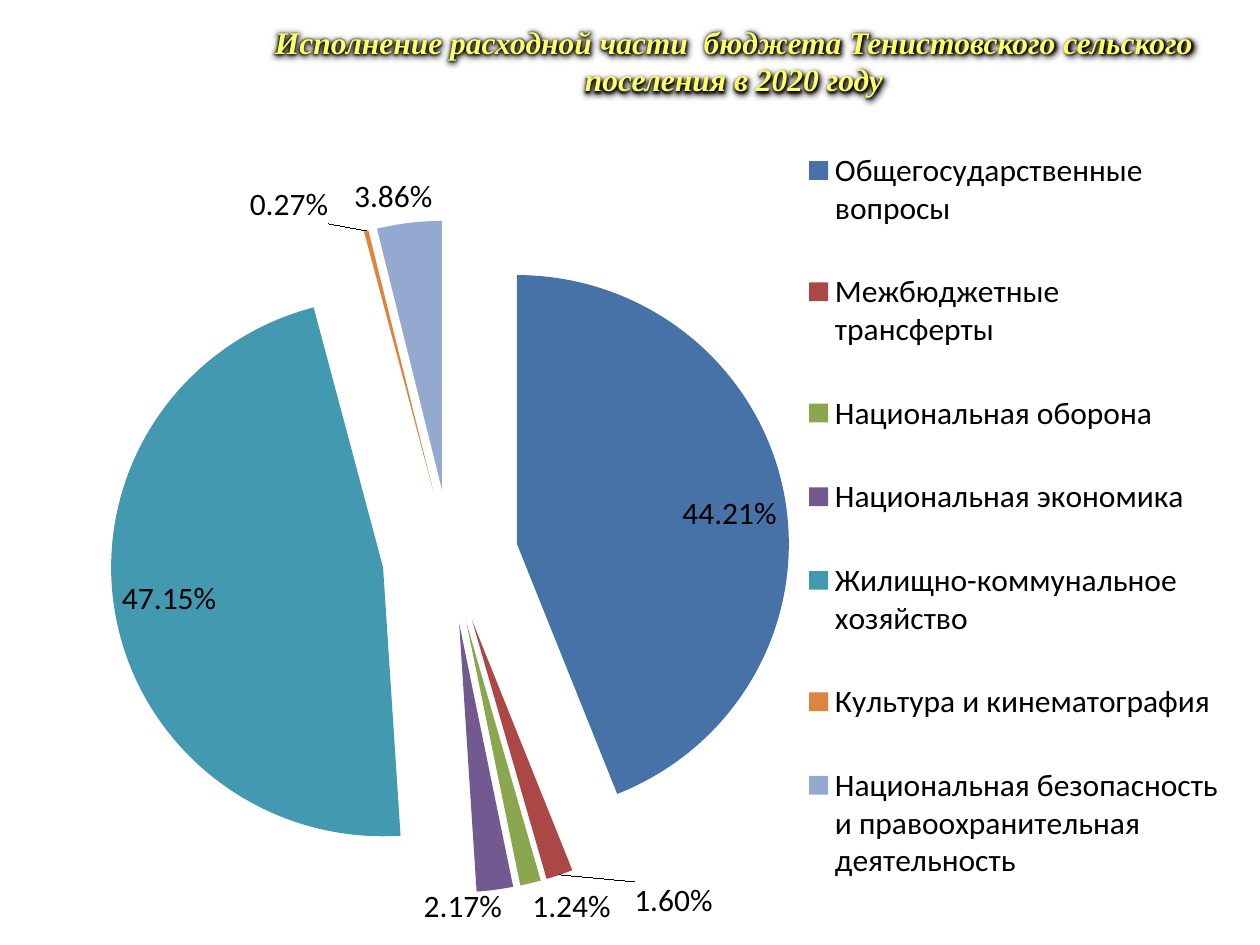
from lxml import etree
from pptx import Presentation
from pptx.chart.data import CategoryChartData
from pptx.dml.color import RGBColor
from pptx.enum.chart import XL_CHART_TYPE as ChartType
from pptx.enum.chart import XL_LABEL_POSITION as LabelPosition
from pptx.enum.chart import XL_LEGEND_POSITION as LegendPosition
from pptx.enum.text import MSO_AUTO_SIZE as AutoSize
from pptx.enum.text import PP_ALIGN as Align
from pptx.oxml.ns import qn
from pptx.util import Pt

TITLE = "Исполнение расходной части  бюджета Тенистовского сельского поселения в 2020 году"
TITLE_FONT = {"name": "Times New Roman", "size": Pt(18), "bold": True, "italic": True}
CHART_FONT = {"name": "Calibri", "size": Pt(18)}
PERCENT = "0.00%"

# Category, share, slice colour
EXPENSES = [
    ("Общегосударственные вопросы", 0.4421, "4672A8"),
    ("Межбюджетные трансферты", 0.016, "AB4744"),
    ("Национальная оборона", 0.0124, "8AA64F"),
    ("Национальная экономика", 0.0217, "725990"),
    ("Жилищно-коммунальное хозяйство", 0.4715, "4299B0"),
    ("Культура и кинематография", 0.0027, "DC853E"),
    ("Национальная безопасность и правоохранительная деятельность", 0.0386, "93A9CF"),
]
# Labels moved from their default places, as fractions of the chart
LABEL_SHIFTS = {1: (0.06, 0), 3: (-0.06, 0), 4: (0, 0.01), 5: (-0.03, 0), 6: (0.02, 0)}


def color(value):
    return RGBColor.from_string(value)


def format_font(font, values, hex_color):
    for name, value in values.items():
        setattr(font, name, value)
    font.color.rgb = color(hex_color)


def make_layout(**settings):
    layout = etree.Element(qn("c:layout"))
    manual = etree.SubElement(layout, qn("c:manualLayout"))
    for name, value in settings.items():
        etree.SubElement(manual, qn(f"c:{name}")).set("val", str(value))
    return layout


def set_layout(element, before, layout):
    for old in element.findall(qn("c:layout")):
        element.remove(old)
    if before is None:
        element.insert(0, layout)
    else:
        element.find(qn(before)).addnext(layout)


def make_effect(kind, hex_color, **settings):
    effects = etree.Element(qn("a:effectLst"))
    effect = etree.SubElement(effects, qn(f"a:{kind}"))
    for name, value in settings.items():
        effect.set(name, str(int(value)))
    etree.SubElement(effect, qn("a:srgbClr"), val=hex_color)
    return effects


def add_title(slide):
    box = slide.shapes.add_textbox(Pt(118.8), Pt(9.4), Pt(601.2), Pt(51.1))
    frame = box.text_frame
    frame.word_wrap = True
    frame.auto_size = AutoSize.SHAPE_TO_FIT_TEXT
    paragraph = frame.paragraphs[0]
    paragraph.alignment = Align.CENTER
    run = paragraph.add_run()
    run.text = TITLE
    format_font(run.font, TITLE_FONT, "FFFF66")

    # Dark halo around the letters
    glow = make_effect("glow", "000000", rad=Pt(4))
    run.font._element.find(qn("a:solidFill")).addnext(glow)
    shadow = make_effect("outerShdw", "000000", blurRad=Pt(3), dist=0, dir=0)
    box._element.spPr.append(shadow)


def format_labels(series):
    labels = series.data_labels
    labels.show_value = True
    labels.number_format = PERCENT
    labels.number_format_is_linked = False
    for index, (_, share, _) in enumerate(EXPENSES):
        inside = share > 0.1
        label = series.points[index].data_label
        label.position = LabelPosition.INSIDE_END if inside else LabelPosition.OUTSIDE_END
    for element in series._element.find(qn("c:dLbls")).findall(qn("c:dLbl")):
        index_element = element.find(qn("c:idx"))
        number_format = etree.Element(qn("c:numFmt"), formatCode=PERCENT, sourceLinked="0")
        index_element.addnext(number_format)
        shift = LABEL_SHIFTS.get(int(index_element.get("val")))
        if shift:
            set_layout(element, "c:idx", make_layout(x=shift[0], y=shift[1]))


def add_expense_chart(slide):
    data = CategoryChartData(number_format=PERCENT)
    data.categories = [name for name, _, _ in EXPENSES]
    data.add_series("Series 1", [share for _, share, _ in EXPENSES])
    frame = slide.shapes.add_chart(
        ChartType.PIE, Pt(19.6), Pt(60.4), Pt(689), Pt(473.8), data)
    chart = frame.chart
    chart.has_title = False
    format_font(chart.font, CHART_FONT, "000000")

    # Slices
    plot = chart.plots[0]
    plot.vary_by_categories = True
    series = plot.series[0]
    for index, (_, _, hex_color) in enumerate(EXPENSES):
        fill = series.points[index].format.fill
        fill.solid()
        fill.fore_color.rgb = color(hex_color)
    explosion = etree.Element(qn("c:explosion"), val="25")
    series._element.find(qn("c:dPt")).addprevious(explosion)
    format_labels(series)

    # Legend and plot placement
    chart.has_legend = True
    legend = chart.legend
    legend.position = LegendPosition.RIGHT
    legend.include_in_layout = False
    set_layout(legend._element, "c:legendPos", make_layout(
        xMode="edge", yMode="edge", x=0.65, y=0, w=0.34, h=1))
    plot_area = chart._chartSpace.chart.plotArea
    set_layout(plot_area, None, make_layout(
        layoutTarget="inner", xMode="edge", yMode="edge", x=0.04, y=0.14, w=0.61, h=0.82))


def main():
    presentation = Presentation()
    presentation.slide_width, presentation.slide_height = Pt(720), Pt(540)
    slide = presentation.slides.add_slide(presentation.slide_layouts[6])
    add_title(slide)
    add_expense_chart(slide)
    presentation.save("out.pptx")


if __name__ == "__main__":
    main()
